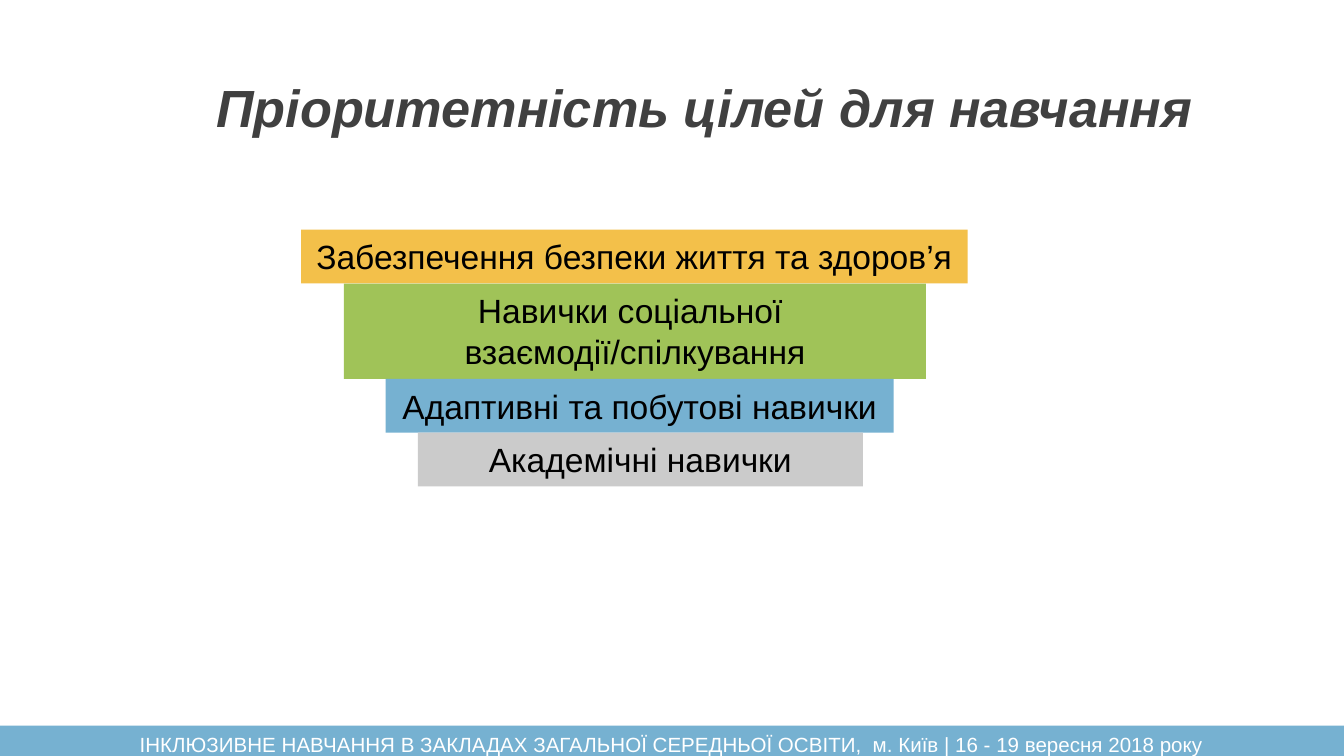
from pptx import Presentation
from pptx.dml.color import RGBColor
from pptx.enum.shapes import MSO_SHAPE
from pptx.enum.text import MSO_ANCHOR, PP_ALIGN
from pptx.util import Inches, Pt

COLORS = {
    "title": "404040",
    "black": "000000",
    "white": "FFFFFF",
    "yellow": "F3C04A",
    "green": "A0C358",
    "blue": "76B1D1",
    "gray": "CBCBCB",
}

# Widescreen 16:9 slide
presentation = Presentation()
presentation.slide_width = Inches(10)
presentation.slide_height = Inches(10 * 9 / 16)
slide = presentation.slides.add_slide(presentation.slide_layouts[6])


def write(shape, text, size=18, color="black", bold=False, italic=False,
          anchor=MSO_ANCHOR.TOP):
    """Fill a shape with centred Arial text, one paragraph per line."""
    frame = shape.text_frame
    frame.word_wrap = True
    frame.vertical_anchor = anchor
    frame.text = text
    for paragraph in frame.paragraphs:
        paragraph.alignment = PP_ALIGN.CENTER
        font = paragraph.font
        font.name = "Arial"
        font.size = Pt(size)
        font.bold = bold
        font.italic = italic
        font.color.rgb = RGBColor.from_string(COLORS[color])


def add_band(left, top, width, height, fill):
    """Draw a flat rectangle without an outline."""
    band = slide.shapes.add_shape(MSO_SHAPE.RECTANGLE, Inches(left), Inches(top),
                                  Inches(width), Inches(height))
    band.shadow.inherit = False
    band.fill.solid()
    band.fill.fore_color.rgb = RGBColor.from_string(COLORS[fill])
    band.line.fill.background()
    return band


# Title
title = slide.shapes.add_textbox(Inches(1.46), Inches(0.37), Inches(7.56), Inches(0.85))
write(title, "Пріоритетність цілей для навчання", size=28, color="title",
      bold=True, italic=True, anchor=MSO_ANCHOR.MIDDLE)

# Priorities: bands stacked from the widest to the narrowest
priorities = [
    ("Забезпечення безпеки життя та здоров’я", 2.24, 4.96, 0.4, "yellow"),
    ("Навички соціальної \nвзаємодії/спілкування", 2.56, 4.33, 0.71, "green"),
    ("Адаптивні та побутові навички", 2.87, 3.78, 0.4, "blue"),
    ("Академічні навички", 3.11, 3.31, 0.4, "gray"),
]
top = 1.71
for goal, left, width, height, fill in priorities:
    write(add_band(left, top, width, height, fill), goal)
    top += height

# Footer
footer = add_band(0, 5.4, 10, 0.29, "blue")
write(footer, "ІНКЛЮЗИВНЕ НАВЧАННЯ В ЗАКЛАДАХ ЗАГАЛЬНОЇ СЕРЕДНЬОЇ ОСВІТИ,  "
              "м. Київ | 16 - 19 вересня 2018 року", size=11, color="white")

presentation.save("out.pptx")
